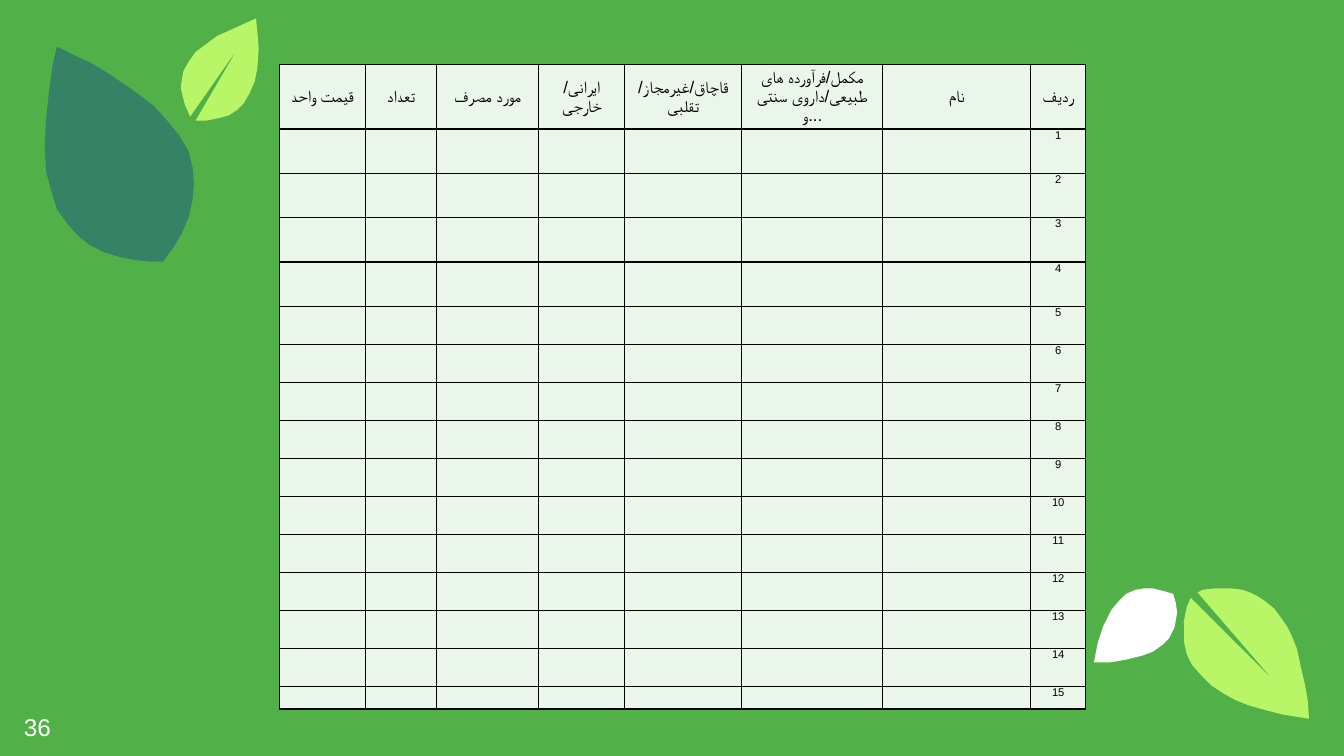
import math

from lxml import etree
from pptx import Presentation
from pptx.dml.color import RGBColor
from pptx.enum.text import MSO_ANCHOR, PP_ALIGN
from pptx.oxml.ns import qn
from pptx.util import Inches, Pt

CENTER, LEFT = PP_ALIGN.CENTER, PP_ALIGN.LEFT
MIDDLE, TOP = MSO_ANCHOR.MIDDLE, MSO_ANCHOR.TOP

GREEN = RGBColor(0x51, 0xB1, 0x48)
LIME = RGBColor(0xB8, 0xF5, 0x67)
BLUE = RGBColor(0x1D, 0x58, 0x85)
WHITE = RGBColor(0xFF, 0xFF, 0xFF)
BLACK = RGBColor(0, 0, 0)
FONT = "Arial"

# Leaf outlines in hundredths of an inch from the corner of the leaf's box
LARGE_VEINED_LEAF = [
    (88, 8), (82, 0), (76, -5), (70, -9), (64, -12), (58, -14), (50, -15), (38, -15),
    (29, -14), (25, -12), (82, 54), (20, -8), (17, -1), (15, 9), (15, 25), (17, 34),
    (21, 42), (28, 50), (35, 57), (44, 63), (53, 68), (63, 72), (77, 76), (89, 79),
    (108, 82), (107, 68), (105, 57), (102, 44), (99, 30), (95, 20), (92, 14)]
SMALL_LEAF = [
    (51, 9), (44, 7), (36, 5), (29, 5), (23, 6), (16, 9), (10, 15), (5, 21), (-1, 33),
    (-5, 45), (-8, 60), (4, 60), (16, 58), (28, 55), (36, 52), (43, 47), (48, 42),
    (52, 34), (54, 23), (53, 16)]
SMALL_VEINED_LEAF = [
    (7, 42), (8, 47), (10, 55), (14, 64), (49, 14), (18, 67), (26, 67), (36, 65),
    (43, 63), (49, 59), (54, 54), (58, 47), (62, 38), (64, 28), (65, 13), (64, 1),
    (63, -9), (54, -5), (43, 0), (34, 4), (26, 10), (18, 16), (13, 23), (9, 30), (8, 36)]
LARGE_LEAF = [
    (96, 165), (104, 154), (110, 144), (115, 132), (118, 119), (119, 107), (118, 95),
    (115, 83), (108, 71), (99, 60), (89, 49), (73, 37), (57, 26), (42, 17), (29, 11),
    (17, 5), (14, 18), (11, 40), (9, 59), (8, 79), (9, 98), (13, 113), (17, 126),
    (25, 137), (33, 146), (42, 153), (52, 158), (65, 162), (76, 164), (86, 165)]
LEAVES = [
    ((8.66, 4.53, 1.24, 0.75), 59.3, LARGE_VEINED_LEAF, LIME, 100),
    ((8.22, 4.33, 0.48, 0.72), 27, SMALL_LEAF, WHITE, 100),
    ((1.27, 0.23, 0.73, 0.59), 267.3, SMALL_VEINED_LEAF, LIME, 100),
    ((0.26, 0.29, 1.07, 1.75), 143.1, LARGE_LEAF, BLUE, 52),
]

HEADERS = ["قیمت واحد", "تعداد", "مورد مصرف", "ایرانی/ خارجی", "قاچاق/غیرمجاز/تقلبی",
           "مکمل/فرآورده های طبیعی/داروی سنتی و...", "نام", "ردیف"]
COLUMN_WIDTHS = [0.64, 0.53, 0.76, 0.64, 0.87, 1.05, 1.1, 0.41]
ITEM_COUNT = 15
HEADER_HEIGHT, TALL_ROW, LAST_ROW = 0.48, 0.33, 0.17
TALL_COUNT = 4


def write(frame, text, size, color=BLACK, align=LEFT):
    para = frame.paragraphs[0]
    para.alignment = align
    if text:
        span = para.add_run()
        span.text = text
        span.font.size, span.font.name = Pt(size), FONT
        span.font.color.rgb = color
        # Persian letters take the complex-script font
        etree.SubElement(span.font._element, qn("a:cs"), typeface=FONT)
    else:  # the end mark keeps an empty row from growing
        etree.SubElement(para._p, qn("a:endParaRPr"), sz=str(size * 100))


def fill_solid(fill, element, color, opacity):
    fill.solid()
    fill.fore_color.rgb = color
    if opacity < 100:
        tint = element.find(qn("a:solidFill")).find(qn("a:srgbClr"))
        etree.SubElement(tint, qn("a:alpha"), val=str(opacity * 1000))


def add_leaf(slide, box, angle, outline, color, opacity):
    """Draw the outline upright in its box, then turn it by the angle."""
    left, top, width, height = box
    cos, sin = math.cos(math.radians(angle)), math.sin(math.radians(angle))
    points = []
    for x, y in outline:
        across, down = x / 100 - width / 2, y / 100 - height / 2
        points.append((Inches(left + width / 2 + across * cos + down * sin),
                       Inches(top + height / 2 - across * sin + down * cos)))
    builder = slide.shapes.build_freeform(*points[0])
    builder.add_line_segments(points[1:], close=True)
    leaf = builder.convert_to_shape()
    leaf.rotation = angle
    leaf.shadow.inherit = False
    leaf.line.fill.background()
    fill_solid(leaf.fill, leaf._element.spPr, color, opacity)


def add_page_number(slide, box, number):
    frame = slide.shapes.add_textbox(*map(Inches, box)).text_frame
    frame.word_wrap = True
    frame.vertical_anchor = MIDDLE
    frame.margin_left = frame.margin_right = Inches(0.1)
    frame.margin_top = frame.margin_bottom = Inches(0.1)
    write(frame, number, 13, color=WHITE)


def add_borders(properties):
    for index, side in enumerate(("lnL", "lnR", "lnT", "lnB")):
        line = etree.Element(qn(f"a:{side}"), w=str(Pt(0.75)))
        fill = etree.SubElement(line, qn("a:solidFill"))
        etree.SubElement(fill, qn("a:srgbClr"), val=str(BLACK))
        properties.insert(index, line)


def format_cell(cell, text, size, anchor):
    cell.margin_left = cell.margin_right = Inches(0.04)
    cell.margin_top = cell.margin_bottom = 0
    cell.vertical_anchor = anchor
    write(cell.text_frame, text, size, align=CENTER)
    properties = cell._tc.get_or_add_tcPr()
    fill_solid(cell.fill, properties, WHITE, 89)
    add_borders(properties)


def add_item_table(slide, box):
    short_count = ITEM_COUNT - TALL_COUNT - 1
    short_row = (box[3] - HEADER_HEIGHT - TALL_COUNT * TALL_ROW - LAST_ROW) / short_count
    heights = ([HEADER_HEIGHT] + [TALL_ROW] * TALL_COUNT
               + [short_row] * short_count + [LAST_ROW])
    table = slide.shapes.add_table(len(heights), len(HEADERS), *map(Inches, box)).table
    table.first_row = table.horz_banding = False
    for column, width in zip(table.columns, COLUMN_WIDTHS):
        column.width = Inches(width)
    for row, height in zip(table.rows, heights):
        row.height = Inches(height)
    for column, header in enumerate(HEADERS):
        format_cell(table.cell(0, column), header, 9, MIDDLE)
        for item in range(1, ITEM_COUNT + 1):
            text = str(item) if header == HEADERS[-1] else ""
            format_cell(table.cell(item, column), text, 6, TOP)


def main():
    deck = Presentation()
    deck.slide_width = Inches(10)
    deck.slide_height = deck.slide_width * 9 // 16
    slide = deck.slides.add_slide(deck.slide_layouts[6])
    slide.background.fill.solid()
    slide.background.fill.fore_color.rgb = GREEN
    for leaf in LEAVES:
        add_leaf(slide, *leaf)
    add_page_number(slide, (0.08, 5.19, 0.6, 0.43), "36")
    add_item_table(slide, (2.08, 0.48, 6, 4.8))
    deck.save("out.pptx")


if __name__ == "__main__":
    main()
